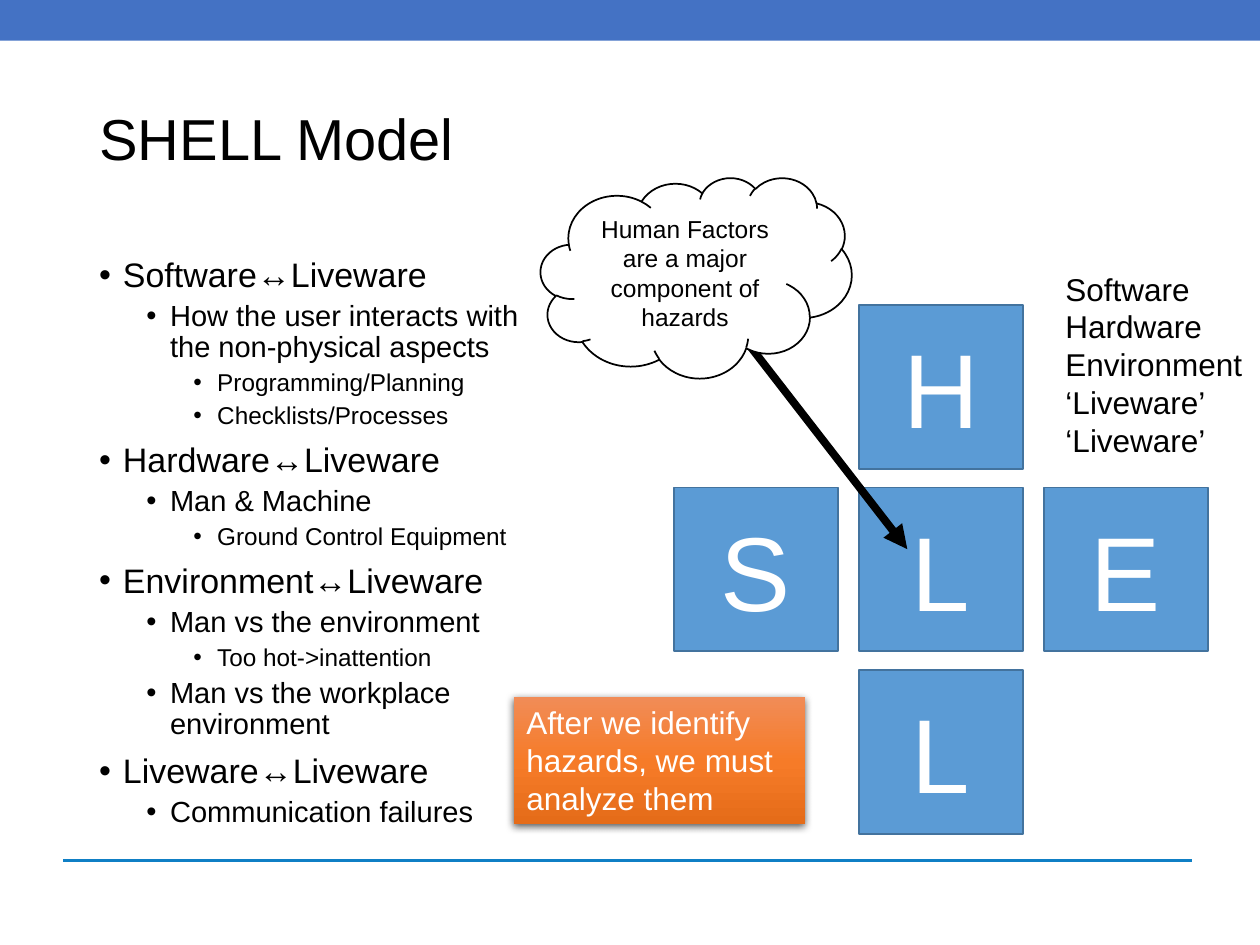
from copy import deepcopy

from lxml.etree import SubElement
from pptx import Presentation
from pptx.dml.color import RGBColor
from pptx.enum.shapes import MSO_CONNECTOR, MSO_SHAPE
from pptx.enum.text import MSO_ANCHOR, MSO_AUTO_SIZE, PP_ALIGN
from pptx.oxml.ns import qn
from pptx.util import Cm, Pt

# Content
TITLE = "SHELL Model"
OUTLINE = [
    (0, "Software↔Liveware"),
    (1, "How the user interacts with the non-physical aspects"),
    (2, "Programming/Planning"),
    (2, "Checklists/Processes"),
    (0, "Hardware↔Liveware"),
    (1, "Man & Machine"),
    (2, "Ground Control Equipment"),
    (0, "Environment↔Liveware"),
    (1, "Man vs the environment"),
    (2, "Too hot->inattention"),
    (1, "Man vs the workplace environment"),
    (0, "Liveware↔Liveware"),
    (1, "Communication failures"),
]
LETTERS = [  # letter, column and row counted from the central square
    ("H", 0, -1), ("L", 0, 0), ("L", 0, 1), ("S", -1, 0), ("E", 1, 0),
]
LEGEND = ["Software", "Hardware", "Environment", "‘Liveware’", "‘Liveware’"]
CLOUD_TEXT = "Human Factors are a major component of hazards"
ACTION_TEXT = "After we identify hazards, we must analyze them"

# Formats
LEVEL_SIZES = [19.4, 16.6, 13.9]
LEVEL_SPACES = [7.5, 3.8, 3.8]
BULLET_INDENT, LEVEL_INDENT = 0.48, 0.95
SQUARE, COLUMN_STEP, ROW_STEP = 3.3, 3.73, 3.68
CENTRE_LEFT, CENTRE_TOP = 17.32, 9.83
ACTION_STOPS = [(0, "F18C57"), (0.5, "F67B28"), (1, "E56C19")]
CENTRED = {"alignment": PP_ALIGN.CENTER}


def colour(value):
    return RGBColor.from_string(value)


def place(left, top, width, height):
    return [Cm(value) for value in (left, top, width, height)]


def apply(target, values):
    for name, value in values.items():
        setattr(target, name, value)


def write(frame, lines, size, ink="000000", anchor=MSO_ANCHOR.TOP, **layout):
    apply(frame, {"word_wrap": True, "auto_size": MSO_AUTO_SIZE.NONE,
                  "vertical_anchor": anchor})
    for number, line in enumerate(lines):
        para = frame.add_paragraph() if number else frame.paragraphs[0]
        apply(para, layout)
        add_span(para, line, size, ink)


def add_span(para, text, size, ink="000000"):
    span = para.add_run()
    span.text = text
    apply(span.font, {"name": "Arial", "size": Pt(size)})
    span.font.color.rgb = colour(ink)


def add_box(kind, area, fill=None, line=None):
    box = page.shapes.add_shape(kind, *place(*area))
    box.shadow.inherit = False
    if fill:
        box.fill.solid()
        box.fill.fore_color.rgb = colour(fill)
    if line:
        box.line.color.rgb = colour(line)
        box.line.width = Pt(1)
    else:
        box.line.fill.background()
    return box


def add_line(start, end, ink, width):
    line = page.shapes.add_connector(
        MSO_CONNECTOR.STRAIGHT, *[Cm(value) for value in start + end])
    line.line.color.rgb = colour(ink)
    line.line.width = Pt(width)
    SubElement(line._element.spPr, qn("a:effectLst"))
    return line


deck = Presentation()
apply(deck, {"slide_width": Cm(25.4), "slide_height": Cm(19.05)})
page = deck.slides.add_slide(deck.slide_layouts[5])

# Page frame
add_line((1.27, 17.35), (24.03, 17.35), "0F7FC5", 1.5)
add_box(MSO_SHAPE.RECTANGLE, (0, 0, 25.4, 0.82), "4472C4")

# Title
title = page.shapes.title
apply(title, dict(zip(("left", "top", "width", "height"),
                      place(1.75, 1.02, 21.89, 3.68))))
write(title.text_frame, [TITLE], 33, anchor=MSO_ANCHOR.MIDDLE,
      alignment=PP_ALIGN.LEFT, line_spacing=0.9)

# Bulleted outline
outline = page.shapes.add_textbox(*place(1.75, 5.08, 9.5, 12.09)).text_frame
outline.word_wrap = True
for number, (level, text) in enumerate(OUTLINE):
    para = outline.add_paragraph() if number else outline.paragraphs[0]
    properties = para._p.get_or_add_pPr()
    properties.set("marL", str(Cm(BULLET_INDENT + LEVEL_INDENT * level)))
    properties.set("indent", str(-Cm(BULLET_INDENT)))
    SubElement(properties, qn("a:buFont"), typeface="Arial")
    SubElement(properties, qn("a:buChar"), char="•")
    apply(para, {"level": level, "line_spacing": 0.9,
                 "space_before": Pt(LEVEL_SPACES[level] if number else 0)})
    add_span(para, text, LEVEL_SIZES[level])

# Cross of lettered squares
for letter, column, row in LETTERS:
    area = (CENTRE_LEFT + column * COLUMN_STEP, CENTRE_TOP + row * ROW_STEP,
            SQUARE, SQUARE)
    square = add_box(MSO_SHAPE.RECTANGLE, area, "5B9BD5", "43739E")
    write(square.text_frame, [letter], 60, "FFFFFF", MSO_ANCHOR.MIDDLE, **CENTRED)

# Legend
legend = page.shapes.add_textbox(*place(21.23, 5.31, 5.49, 4.11))
write(legend.text_frame, LEGEND, 18)

# Cloud with its arrow to the central square
arrow = add_line((14.48, 6.15), (18.29, 11.07), "000000", 4.5)
SubElement(arrow.line._get_or_add_ln(), qn("a:tailEnd"), type="triangle")
cloud = add_box(MSO_SHAPE.CLOUD, (10.9, 3.58, 6.27, 4.04), "FFFFFF", "000000")
write(cloud.text_frame, [CLOUD_TEXT], 14, **CENTRED)

# Action box with gradient and soft shadow
action = add_box(MSO_SHAPE.RECTANGLE, (10.36, 14.05, 5.87, 2.57))
action.fill.gradient()
action.fill.gradient_angle = 270
stop_list = action._element.spPr.find(".//" + qn("a:gsLst"))
stop_list.append(deepcopy(stop_list[-1]))
for stop, (position, ink) in zip(action.fill.gradient_stops, ACTION_STOPS):
    stop.position = position
    stop.color.rgb = colour(ink)
shadow = SubElement(action._element.spPr.find(qn("a:effectLst")),
                    qn("a:outerShdw"), blurRad=str(Pt(4.5)), dist=str(Pt(1.5)),
                    dir="5400000", algn="ctr", rotWithShape="0")
shadow_colour = SubElement(shadow, qn("a:srgbClr"), val="000000")
SubElement(shadow_colour, qn("a:alpha"), val="63000")
write(action.text_frame, [ACTION_TEXT], 18, "FFFFFF", alignment=PP_ALIGN.LEFT)

deck.save("out.pptx")
